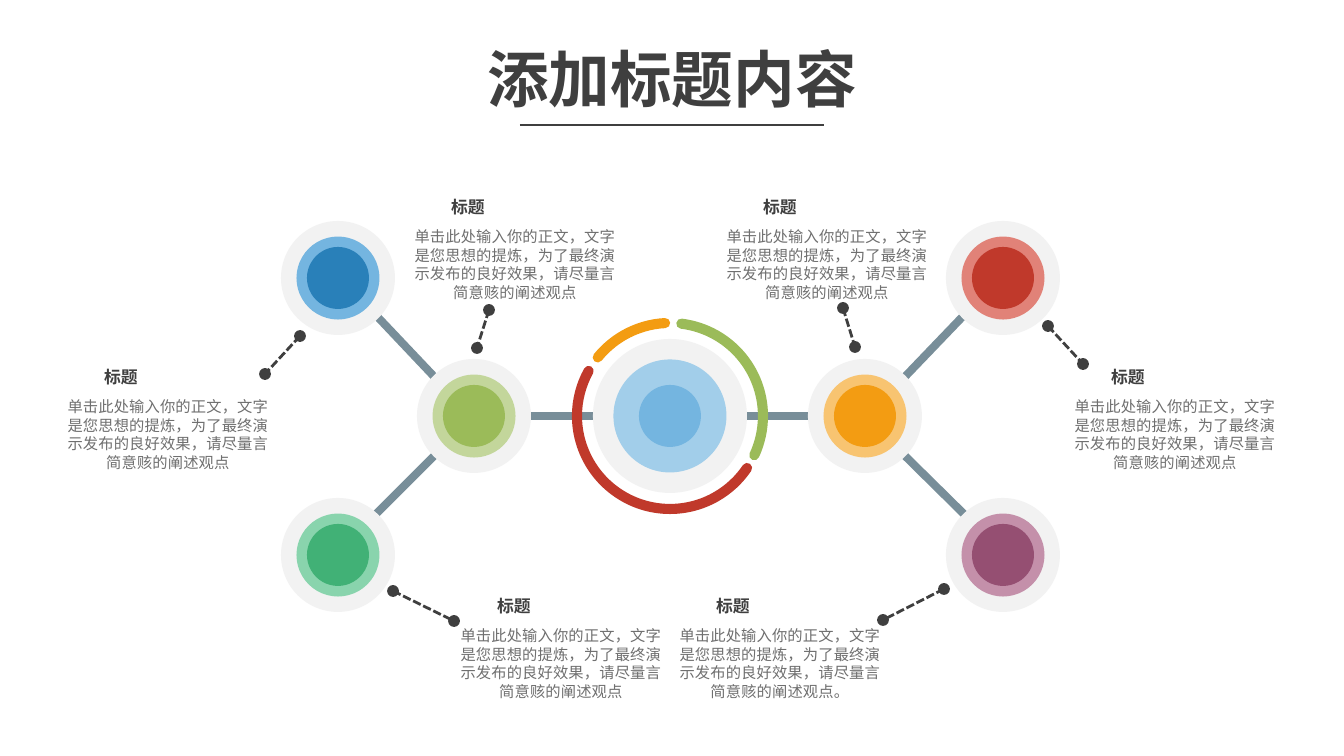
"""Build a node-network slide with six captioned branches around a core."""
from math import hypot

from pptx import Presentation
from pptx.dml.color import RGBColor
from pptx.enum.dml import MSO_LINE
from pptx.enum.shapes import MSO_CONNECTOR, MSO_SHAPE
from pptx.enum.text import MSO_ANCHOR, MSO_AUTO_SIZE, PP_ALIGN
from pptx.oxml.ns import qn
from pptx.util import Pt
from lxml import etree

PX = 914400 / 134.4
DARK, GREY, HALO, BAR = "3F3F3F", "6F6F6F", "F2F2F2", "788E99"
TITLE = "添加标题内容"
HEADING = "标题"
BODY = "单击此处输入你的正文，文字是您思想的提炼，为了最终演示发布的良好效果，请尽量言简意赅的阐述观点"
CAPTIONS = [
    (53, 391, BODY), (400, 221, BODY), (712, 221, BODY),
    (1060, 391, BODY), (446, 620, BODY), (665, 620, BODY + "。"),
]
CORE = (670, 416)
CORE_SIZES, NODE_SIZES = (154, 113, 62), (114, 83, 62)
NODES = [
    (338, 278, "74B5E0", "2980B9"), (338, 555, "89D4AD", "41B176"),
    (474, 416, "C3D69B", "9BBB59"), (865, 416, "F8C471", "F39C12"),
    (1003, 278, "E18278", "C0392B"), (1003, 555, "C490AA", "954F72"),
]
BARS = [
    (516, 416, 824, 416), (441, 449, 370, 520), (441, 384, 371, 310),
    (898, 449, 970, 520), (898, 384, 969, 310),
]
LEADERS = [
    (300, 336, 265, 374), (1048, 326, 1083, 364), (393, 591, 454, 621),
    (944, 589, 883, 620), (489, 310, 477, 348), (843, 308, 855, 347),
]
ARCS = [(219, 267, "F39C12"), (277, 25, "9BBB59"), (34, 209, "C0392B")]
ARC_SIZE, ARC_WIDTH, BAR_HALF, DOT = 186, 5.4, 4, 10


def emu(*lengths):
    return [round(length * PX) for length in lengths]


def color(value):
    return RGBColor.from_string(value)


def paint(shape, fill):
    shape.shadow.inherit = False
    shape.fill.solid()
    shape.fill.fore_color.rgb = color(fill)
    shape.line.fill.background()


def ring_shape(kind, x, y, size):
    return slide.shapes.add_shape(kind, *emu(x - size / 2, y - size / 2, size, size))


def disc(x, y, size, fill):
    shape = ring_shape(MSO_SHAPE.OVAL, x, y, size)
    paint(shape, fill)
    return shape


def bar(x1, y1, x2, y2):
    ratio = BAR_HALF / hypot(x2 - x1, y2 - y1)
    dx, dy = (y1 - y2) * ratio, (x2 - x1) * ratio
    corners = [emu(x1 + dx, y1 + dy), emu(x2 + dx, y2 + dy),
               emu(x2 - dx, y2 - dy), emu(x1 - dx, y1 - dy)]
    builder = slide.shapes.build_freeform(*corners[0])
    builder.add_line_segments(corners[1:], close=True)
    paint(builder.convert_to_shape(), BAR)


def rounded_arc(start, end, stroke):
    arc = ring_shape(MSO_SHAPE.ARC, *CORE, ARC_SIZE)
    arc.shadow.inherit = False
    arc.fill.background()
    arc.adjustments[0], arc.adjustments[1] = start * 0.6, end * 0.6
    arc.line.color.rgb = color(stroke)
    arc.line.width = Pt(ARC_WIDTH)
    arc.element.spPr.find(qn("a:ln")).set("cap", "rnd")


def line(x1, y1, x2, y2, width):
    connector = slide.shapes.add_connector(MSO_CONNECTOR.STRAIGHT, *emu(x1, y1, x2, y2))
    connector.line.color.rgb = color(DARK)
    connector.line.width = Pt(width)
    etree.SubElement(connector.element.spPr, qn("a:effectLst"))
    return connector


def write(frame, text, size, fill, bold, align):
    frame.text = text
    paragraph = frame.paragraphs[0]
    paragraph.alignment = align
    font = paragraph.runs[0].font
    font.name, font.size, font.bold = "Arial", Pt(size), bold
    font.color.rgb = color(fill)
    return paragraph


def text_box(x, y, width, height, wrap):
    frame = slide.shapes.add_textbox(*emu(x, y, width, height)).text_frame
    frame.word_wrap = wrap
    frame.auto_size = MSO_AUTO_SIZE.SHAPE_TO_FIT_TEXT
    return frame


def caption(x, y, body):
    write(text_box(x + 38, y - 31, 62, 34, False), HEADING, 9, DARK, True, PP_ALIGN.LEFT)
    write(text_box(x, y, 230, 89, True), body, 8.25, GREY, False, PP_ALIGN.CENTER)


prs = Presentation()
prs.slide_width, prs.slide_height = emu(1344, 756)
slide = prs.slides.add_slide(prs.slide_layouts[5])

title = slide.shapes.title
title.left, title.top, title.width, title.height = emu(93, 40, 1158, 85)
title.text_frame.auto_size = MSO_AUTO_SIZE.NONE
title.text_frame.vertical_anchor = MSO_ANCHOR.MIDDLE
write(title.text_frame, TITLE, 33, DARK, True, PP_ALIGN.CENTER).line_spacing = 0.9
line(520, 125, 824, 125, 1)

for ends in BARS:
    bar(*ends)
for x, y, ring, center in NODES:
    for size, fill in zip(NODE_SIZES, (HALO, ring, center)):
        disc(x, y, size, fill)
for size, fill in zip(CORE_SIZES, (HALO, "A2CEEA", "74B5E0")):
    disc(*CORE, size, fill)
for arc in ARCS:
    rounded_arc(*arc)
for item in CAPTIONS:
    caption(*item)
for x1, y1, x2, y2 in LEADERS:
    line(x1, y1, x2, y2, 1.5).line.dash_style = MSO_LINE.SQUARE_DOT
    for x, y in ((x1, y1), (x2, y2)):
        dot = disc(x, y, DOT, DARK)
        dot.line.color.rgb = color(DARK)
        dot.line.width = Pt(1)

prs.save("out.pptx")
